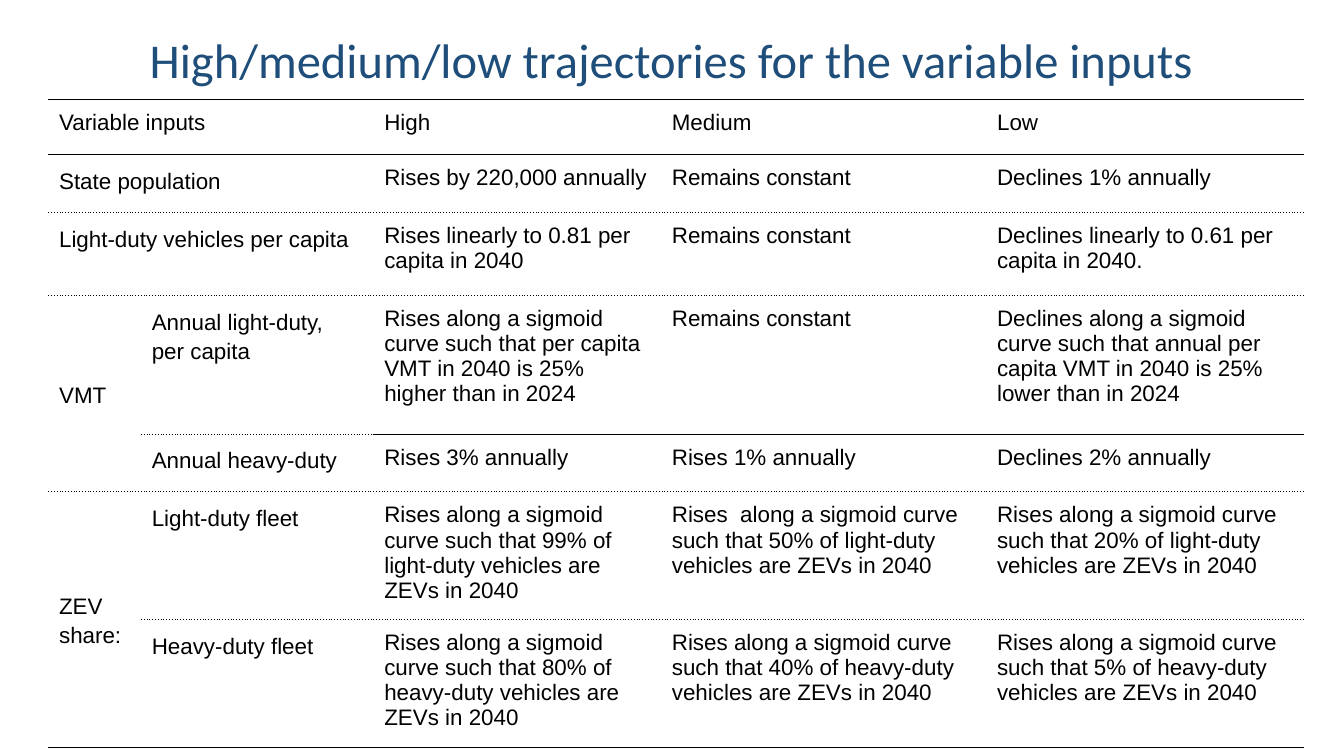
"""Build a slide with a table of high, medium and low input trajectories."""
from dataclasses import dataclass
from typing import Optional

from lxml import etree
from pptx import Presentation
from pptx import util as u
from pptx.dml.color import RGBColor
from pptx.enum import text
from pptx.oxml import ns


@dataclass(frozen=True)
class Theme:
    """Hold the colours, fonts and type sizes of the slide."""
    title_color: str = "1E4E79"
    ink: str = "000000"
    title_font: str = "Calibri"
    body_font: str = "Arial"
    title_size: int = 26
    body_size: int = 12
    label_spacing: float = 1.15
    rule_width: float = 0.5


@dataclass(frozen=True)
class Row:
    """Describe a table row by height, labels, values and the rule below it."""
    height: int
    group: str
    label: str
    values: tuple[str, str, str]
    rule: str = "dot"
    value_rule: str = "dot"


THEME = Theme()
SLIDE_WIDTH = u.Inches(10)
SLIDE_HEIGHT = SLIDE_WIDTH * 9 // 16
GRID_UNIT = SLIDE_WIDTH // 1000
TABLE_LEFT, TABLE_TOP = 36, 74
CELL_MARGIN = 8
COLUMN_WIDTHS = (69, 173, 214, 242, 236)
SIGMOID = "Rises along a sigmoid curve such that"

ROWS = (
    Row(41, "Variable inputs", "", ("High", "Medium", "Low"), "solid", "solid"),
    Row(43, "State population", "",
        ("Rises by 220,000 annually", "Remains constant", "Declines 1% annually")),
    Row(62, "Light-duty vehicles per capita", "",
        ("Rises linearly to 0.81 per capita in 2040", "Remains constant",
         "Declines linearly to 0.61 per capita in 2040.")),
    Row(103, "VMT", "Annual light-duty, \vper capita",
        (f"{SIGMOID} per capita VMT in 2040 is 25% higher than in 2024",
         "Remains constant",
         "Declines along a sigmoid curve such that annual per capita VMT "
         "in 2040 is 25% lower than in 2024"), value_rule="solid"),
    Row(43, "", "Annual heavy-duty",
        ("Rises 3% annually", "Rises 1% annually", "Declines 2% annually")),
    Row(95, "ZEV share:", "Light-duty fleet",
        (f"{SIGMOID} 99% of light-duty vehicles are ZEVs in 2040",
         "Rises  along a sigmoid curve such that 50% of light-duty vehicles "
         "are ZEVs in 2040",
         f"{SIGMOID} 20% of light-duty vehicles are ZEVs in 2040")),
    Row(95, "", "Heavy-duty fleet",
        tuple(f"{SIGMOID} {share}% of heavy-duty vehicles are ZEVs in 2040"
              for share in (80, 40, 5)), "solid", "solid"),
)


def grid(units: int) -> int:
    """Convert grid units to a length."""
    return units * GRID_UNIT


def format_paragraph(paragraph, font: str, size: int, color: str) -> None:
    """Apply font, size and colour to every run."""
    for run in paragraph.runs:
        run.font.name = font
        run.font.size = u.Pt(size)
        run.font.bold = False
        run.font.color.rgb = RGBColor.from_string(color)


def add_title(slide, wording: str) -> None:
    """Place and format the title placeholder."""
    title = slide.shapes.title
    title.left, title.top = grid(11), grid(8)
    title.width, title.height = grid(978), grid(66)
    frame = title.text_frame
    frame.text = wording
    frame.auto_size = text.MSO_AUTO_SIZE.NONE
    frame.vertical_anchor = text.MSO_ANCHOR.MIDDLE
    frame.margin_left = frame.margin_right = grid(7)
    frame.margin_top = frame.margin_bottom = grid(4)
    paragraph = frame.paragraphs[0]
    paragraph.alignment = text.PP_ALIGN.CENTER
    paragraph.line_spacing = THEME.label_spacing
    paragraph.space_before = paragraph.space_after = u.Pt(12)
    format_paragraph(paragraph, THEME.title_font, THEME.title_size, THEME.title_color)


def rule_below(row: int, column: int) -> Optional[str]:
    """Return the dash of the rule under a grid cell, if there is one."""
    if row < 0:
        return "solid"
    if column == 0 and row + 1 < len(ROWS) and not ROWS[row + 1].group:
        return None
    return ROWS[row].rule if column < 2 else ROWS[row].value_rule


def set_borders(cell, top: Optional[str], bottom: Optional[str]) -> None:
    """Draw horizontal rules and hide the vertical ones."""
    properties = cell._tc.get_or_add_tcPr()
    sides = {"lnL": None, "lnR": None, "lnT": top, "lnB": bottom}
    for index, (side, dash) in enumerate(sides.items()):
        line = etree.Element(ns.qn(f"a:{side}"), w=str(u.Pt(THEME.rule_width)))
        properties.insert(index, line)
        if dash is None:
            etree.SubElement(line, ns.qn("a:noFill"))
            continue
        fill = etree.SubElement(line, ns.qn("a:solidFill"))
        etree.SubElement(fill, ns.qn("a:srgbClr"), val=THEME.ink)
        etree.SubElement(line, ns.qn("a:prstDash"), val=dash)


def fill_cell(cell, wording: str, row: int, column: int) -> None:
    """Write a cell and align it according to its place."""
    cell.text_frame.text = wording
    paragraph = cell.text_frame.paragraphs[0]
    justified = row == 0 or column == 0 or (column == 1 and row > 4)
    paragraph.alignment = text.PP_ALIGN.JUSTIFY if justified else text.PP_ALIGN.LEFT
    if row > 0 and column < 2:
        paragraph.line_spacing = THEME.label_spacing
    if cell.is_merge_origin and cell.span_height > 1:
        cell.vertical_anchor = text.MSO_ANCHOR.MIDDLE
    format_paragraph(paragraph, THEME.body_font, THEME.body_size, THEME.ink)


def merge_labels(table) -> None:
    """Join unlabelled group cells sideways and repeated groups downwards."""
    for index, row in enumerate(ROWS):
        if not row.label:
            table.cell(index, 0).merge(table.cell(index, 1))
        elif not row.group:
            table.cell(index - 1, 0).merge(table.cell(index, 0))


def add_trajectory_table(slide) -> None:
    """Add the table of variable inputs."""
    frame = slide.shapes.add_table(
        len(ROWS), len(COLUMN_WIDTHS), grid(TABLE_LEFT), grid(TABLE_TOP),
        grid(sum(COLUMN_WIDTHS)), grid(sum(row.height for row in ROWS)))
    table = frame.table
    table.first_row = table.horz_banding = False
    for column, width in zip(table.columns, COLUMN_WIDTHS):
        column.width = grid(width)
    merge_labels(table)
    for row_index, row in enumerate(ROWS):
        table.rows[row_index].height = grid(row.height)
        for column, wording in enumerate((row.group, row.label, *row.values)):
            cell = table.cell(row_index, column)
            cell.margin_left = cell.margin_right = grid(CELL_MARGIN)
            cell.margin_top = cell.margin_bottom = grid(CELL_MARGIN)
            cell.fill.background()
            last_row = row_index + (cell.span_height - 1 if cell.is_merge_origin else 0)
            set_borders(cell, rule_below(row_index - 1, column),
                        rule_below(last_row, column))
            if not cell.is_spanned:
                fill_cell(cell, wording, row_index, column)


def main() -> None:
    """Build and save the presentation."""
    presentation = Presentation()
    presentation.slide_width = SLIDE_WIDTH
    presentation.slide_height = SLIDE_HEIGHT
    slide = presentation.slides.add_slide(presentation.slide_layouts[5])
    add_title(slide, "High/medium/low trajectories for the variable inputs")
    add_trajectory_table(slide)
    presentation.save("out.pptx")


if __name__ == "__main__":
    main()
